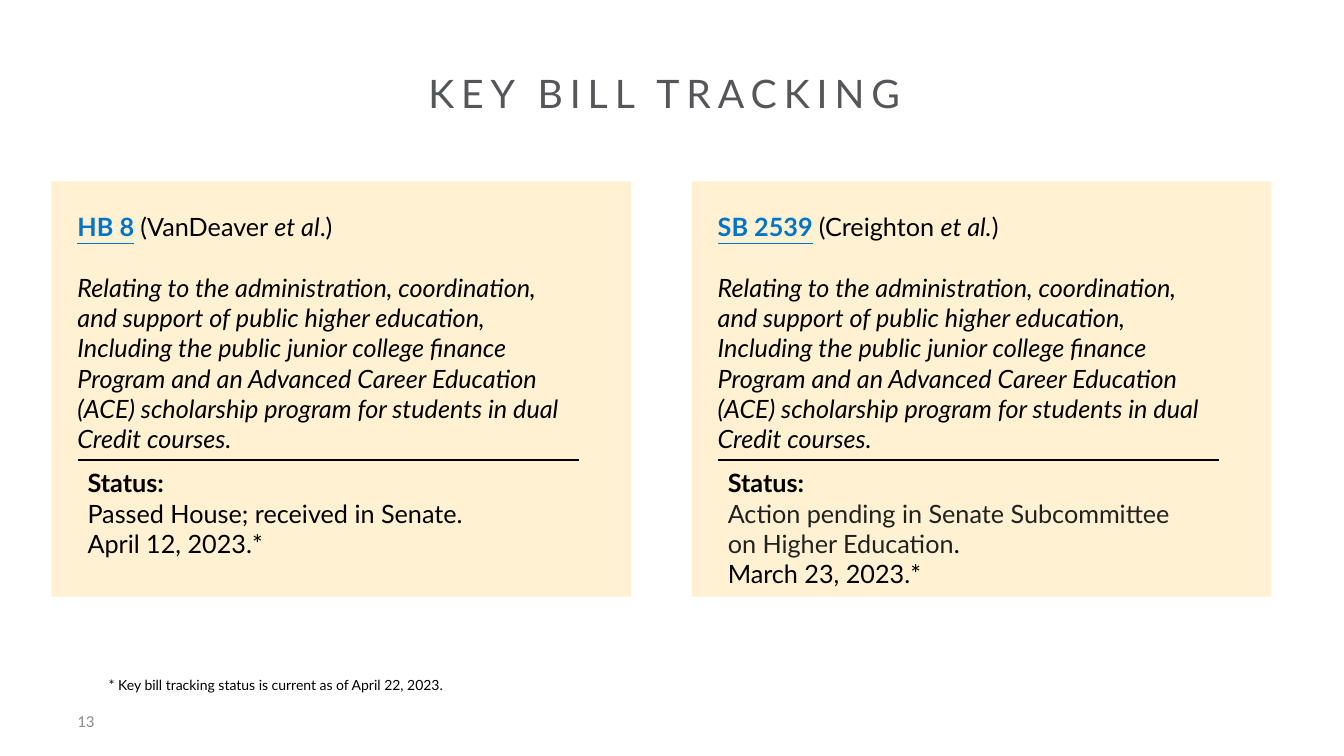
from lxml.etree import SubElement
from pptx import Presentation
from pptx.dml.color import RGBColor as RGB
from pptx.enum.shapes import MSO_CONNECTOR as LINE, MSO_SHAPE as SHAPE
from pptx.enum.text import MSO_ANCHOR as ANCHOR, MSO_AUTO_SIZE as FIT, PP_ALIGN as ALIGN
from pptx.oxml.ns import qn
from pptx.util import Inches, Pt

WIDE, HIGH = 13.33, 7.5
EDGE, TOP = 0.51, 1.8
CARD, TALL, GAP = 5.75, 4.12, 0.6
PAD = 0.16
RULE = 4.56
BLACK, BLUE, CREAM = "000000", "0075C9", "FFF1D1"
SLATE, GRAY, DARK = "555659", "8C8C8C", "212121"

BILL = [
    "Relating to the administration, coordination,",
    "and support of public higher education,",
    "Including the public junior college finance",
    "Program and an Advanced Career Education",
    "(ACE) scholarship program for students in dual",
    "Credit courses.",
]
CARDS = [
    (
        [("HB 8", "link"), (" ", "bold"), ("(VanDeaver ", ""), ("et al", "ital"), (".)", "")],
        [
            [("Passed House; received in Senate.", "")],
            [("April 12, 2023.*", "")],
        ],
    ),
    (
        [("SB 2539", "link"), (" ", "bold"), ("(Creighton ", ""), ("et al.", "ital"), (")", "")],
        [
            [("Action pending in Senate Subcommittee", "dark")],
            [("on Higher Education", "dark"), (".", "")],
            [("March 23, 2023.*", "")],
        ],
    ),
]


def paint(fmt, tint):
    fmt.rgb = RGB.from_string(tint)


def add_run(para, text, size, tint=BLACK, face="Lato"):
    run = para.add_run()
    run.text = text
    run.font.name = face
    run.font.size = Pt(size)
    paint(run.font.color, tint)
    return run


def add_runs(para, parts):
    tints = {"link": BLUE, "dark": DARK}
    for text, mark in parts:
        font = add_run(para, text, 18, tints.get(mark, BLACK)).font
        font.bold = mark in ("link", "bold")
        font.italic = mark == "ital"
        font.underline = mark == "link"


def add_box(slide, left, top, width, height):
    box = slide.shapes.add_textbox(*map(Inches, (left, top, width, height)))
    box.text_frame.word_wrap = True
    return box.text_frame


def add_lines(frame, lines):
    for row, parts in enumerate(lines):
        para = frame.add_paragraph() if row else frame.paragraphs[0]
        add_runs(para, parts)


def add_title(slide, text):
    title = slide.shapes.title
    title.left, title.top = Inches(0.67), Inches(0.69)
    title.width, title.height = Inches(12.01), Inches(0.57)
    frame = title.text_frame
    frame.auto_size = FIT.NONE
    frame.vertical_anchor = ANCHOR.TOP
    para = frame.paragraphs[0]
    para.alignment = ALIGN.CENTER
    para.line_spacing = 0.9
    run = add_run(para, text, 28, SLATE)
    run.font._element.set("spc", "500")


def add_rule(slide, left, top, width):
    ends = map(Inches, (left, top, left + width, top))
    rule = slide.shapes.add_connector(LINE.STRAIGHT, *ends)
    paint(rule.line.color, BLACK)
    rule.line.width = Pt(1.5)
    SubElement(rule._element.spPr, qn("a:effectLst"))


def add_card(slide, left, head, status):
    card = slide.shapes.add_shape(SHAPE.RECTANGLE, *map(Inches, (left, TOP, CARD, TALL)))
    card.shadow.inherit = False
    card.fill.solid()
    paint(card.fill.fore_color, CREAM)
    card.line.fill.background()
    inner = left + PAD
    bill = add_box(slide, inner, TOP + 0.25, CARD - 2 * PAD, 2.52)
    add_lines(bill, [head] + [[(text, "ital")] for text in BILL])
    bill.paragraphs[0].space_after = Pt(21.6)
    state = add_box(slide, inner + 0.1, RULE + 0.03, CARD - 3 * PAD, 1.31)
    add_lines(state, [[("Status:", "bold")]] + status)
    add_rule(slide, inner + 0.1, RULE, 4.97)


def main():
    deck = Presentation()
    deck.slide_width, deck.slide_height = Inches(WIDE), Inches(HIGH)
    slide = deck.slides.add_slide(deck.slide_layouts[5])
    add_title(slide, "KEY BILL TRACKING ")
    for col, (head, status) in enumerate(CARDS):
        add_card(slide, EDGE + col * (CARD + GAP), head, status)
    note = add_box(slide, 0.98, 6.66, 6.35, 0.27)
    add_run(note.paragraphs[0], "* Key bill tracking status is current as of April 22, 2023.", 10)
    page = add_box(slide, 0.67, 6.95, 3, 0.4)
    page.vertical_anchor = ANCHOR.MIDDLE
    add_run(page.paragraphs[0], "13", 12, GRAY, "Calibri")
    deck.save("out.pptx")


if __name__ == "__main__":
    main()
